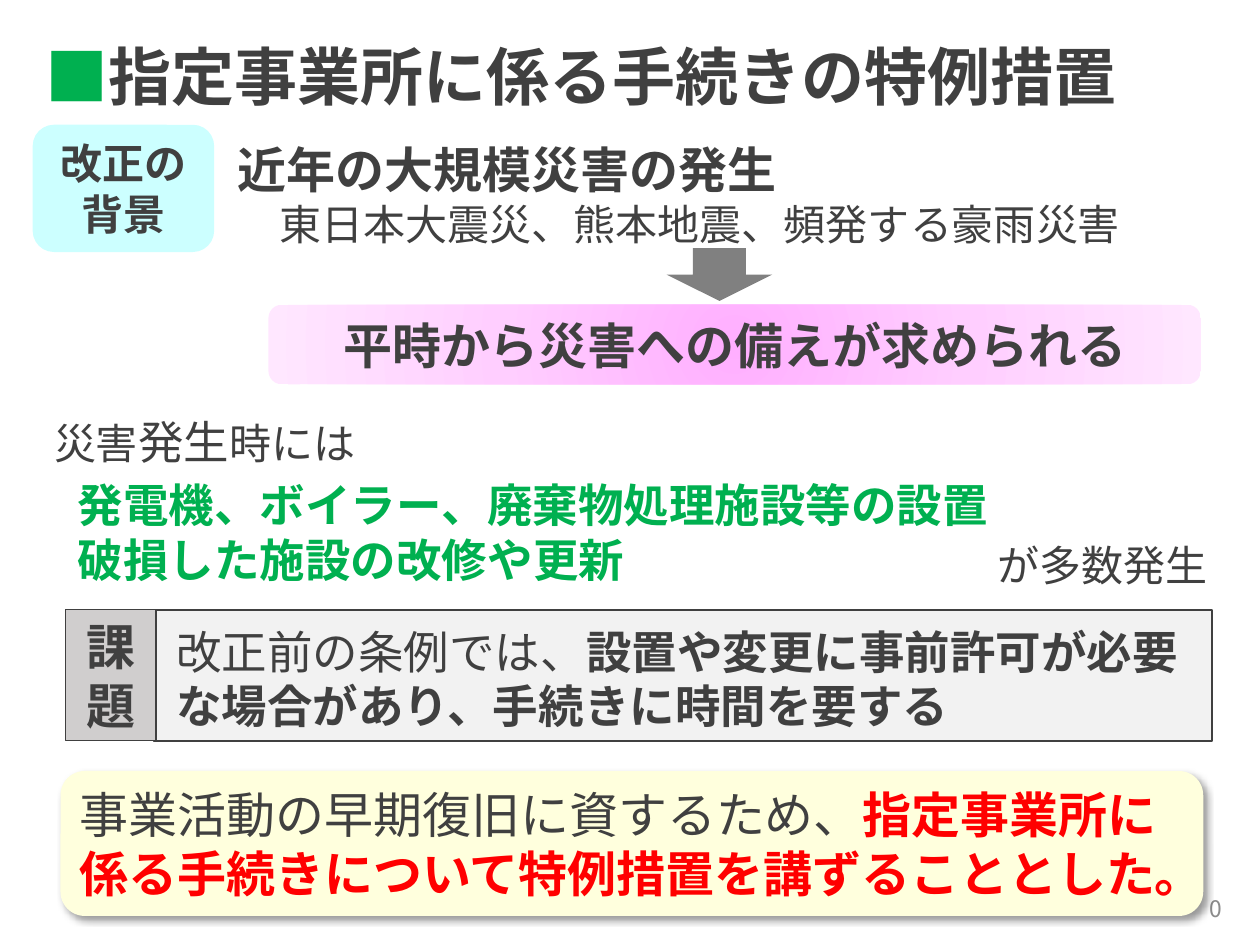
from lxml.etree import SubElement
from pptx import Presentation
from pptx.dml.color import RGBColor
from pptx.enum.lang import MSO_LANGUAGE_ID
from pptx.enum.shapes import MSO_SHAPE
from pptx.enum.text import MSO_ANCHOR, PP_ALIGN
from pptx.oxml import parse_xml
from pptx.oxml.ns import nsdecls, qn
from pptx.util import Pt

FONT = "Noto Sans CJK JP"
COLORS = {
    "text": "404040",
    "green": "00B050",
    "red": "FF0000",
    "number": "8C8C8C",
    "cyan": "CCFFFF",
    "arrow": "808080",
    "panel": "F2F2F2",
    "label": "D0CECE",
    "cream": "FFFFDD",
    "pink": "FFAFFF",
    "pink_mid": "FFCEFF",
    "pink_pale": "FFE7FF",
    "shadow": "000000",
}


def color(name):
    return RGBColor.from_string(COLORS[name])


def style_font(font, properties, size, tint="text", bold=False):
    font.size = Pt(size)
    font.bold = bold
    font.color.rgb = color(tint)
    font.name = FONT
    font.language_id = MSO_LANGUAGE_ID.JAPANESE
    SubElement(properties, qn("a:ea")).set("typeface", FONT)


def write(shape, paragraphs, align=PP_ALIGN.LEFT, anchor=MSO_ANCHOR.MIDDLE):
    frame = shape.text_frame
    frame.word_wrap = True
    frame.vertical_anchor = anchor
    for index, spans in enumerate(paragraphs):
        para = frame.add_paragraph() if index else frame.paragraphs[0]
        para.alignment = align
        for text, *look in spans:
            span = para.add_run()
            span.text = text
            if len(spans) > 1:
                style_font(span.font, span._r.get_or_add_rPr(), *look)
        if len(spans) == 1:
            properties = para._p.get_or_add_pPr().get_or_add_defRPr()
            style_font(para.font, properties, *spans[0][1:])
    return frame


def indent(para, left, first=0):
    properties = para._p.get_or_add_pPr()
    properties.set("marL", str(Pt(left)))
    properties.set("indent", str(Pt(first)))


def add_text(page, place, paragraphs, align=PP_ALIGN.LEFT, anchor=MSO_ANCHOR.TOP):
    box = page.shapes.add_textbox(*map(Pt, place))
    return write(box, paragraphs, align, anchor)


def add_block(page, kind, place, fill, line_width=0):
    block = page.shapes.add_shape(kind, *map(Pt, place))
    block.shadow.inherit = False
    block.fill.solid()
    block.fill.fore_color.rgb = color(fill)
    if line_width:
        block.line.color.rgb = color("text")
        block.line.width = Pt(line_width)
    else:
        block.line.fill.background()
    return block


def glow_from_center(block, names):
    step = 100000 // (len(names) - 1)
    stops = "".join(
        f'<a:gs pos="{index * step}"><a:srgbClr val="{COLORS[name]}"/></a:gs>'
        for index, name in enumerate(names)
    )
    gradient = parse_xml(
        f'<a:gradFill {nsdecls("a")} rotWithShape="1"><a:gsLst>{stops}</a:gsLst>'
        '<a:path path="circle"><a:fillToRect l="50000" t="50000" r="50000" b="50000"/>'
        "</a:path></a:gradFill>"
    )
    properties = block._element.spPr
    properties.replace(properties.find(qn("a:solidFill")), gradient)


def drop_shadow(block):
    effects = block._element.spPr.find(qn("a:effectLst"))
    effects.append(parse_xml(
        f'<a:outerShdw {nsdecls("a")} blurRad="{Pt(4)}" dist="{Pt(3)}" dir="2700000" '
        f'algn="tl" rotWithShape="0"><a:srgbClr val="{COLORS["shadow"]}">'
        '<a:alpha val="40000"/></a:srgbClr></a:outerShdw>'
    ))


def add_background_section(page):
    badge = add_block(page, MSO_SHAPE.ROUNDED_RECTANGLE, (18.7, 71.3, 103.7, 72.7), "cyan")
    write(badge, [[("改正の", 24, "text", True)], [("背景", 24, "text", True)]], PP_ALIGN.CENTER)
    disasters = add_text(page, (128.9, 76.3, 563, 70.6), [
        [("近年の大規模災害の発生", 28, "text", True)],
        [("東日本大震災、熊本地震、頻発する豪雨災害", 24)],
    ])
    indent(disasters.paragraphs[1], 24)
    add_block(page, MSO_SHAPE.DOWN_ARROW, (380.9, 141.8, 60.5, 30.2), "arrow")
    need = add_block(page, MSO_SHAPE.ROUNDED_RECTANGLE, (153.4, 174.2, 532.8, 45.4), "pink")
    glow_from_center(need, ["pink", "pink_mid", "pink_pale"])
    write(need, [[("平時から災害への備えが求められる", 28, "text", True)]], PP_ALIGN.CENTER)


def add_disaster_section(page):
    add_text(page, (37.4, 269.3, 603.4, 70.6), [
        [("発電機、ボイラー、廃棄物処理施設等の設置", 26, "green", True)],
        [("破損した施設の改修や更新", 26, "green", True)],
    ])
    add_text(page, (23.8, 233.3, 260, 38.9), [[("災害", 24), ("発生", 26), ("時には", 24)]])
    add_text(page, (563, 304.6, 139.7, 36), [[("が多数発生", 24)]])


def add_issue_section(page):
    top, height = 348.5, 74.9
    add_block(page, MSO_SHAPE.RECTANGLE, (87.8, top, 604.8, height), "panel", 1)
    add_text(page, (93.6, 352.8, 609.1, 70.6), [[
        ("改正前の条例では、", 26),
        ("設置や変更に事前許可が必要な場合があり、手続きに時間を要する", 26, "text", True),
    ]])
    label = add_block(page, MSO_SHAPE.RECTANGLE, (37.4, top, 51.8, height), "label", 0.75)
    write(label, [[("課題", 28, "text", True)]], PP_ALIGN.CENTER)


def add_conclusion(page):
    panel = add_block(page, MSO_SHAPE.ROUNDED_RECTANGLE, (34.6, 440.6, 653, 82.8), "cream")
    drop_shadow(panel)
    write(panel, [[
        ("事業活動の早期復旧に資するため、", 28),
        ("指定事業所に係る手続きについて特例措置を講ずることとした。", 28, "red", True),
    ]])


def main():
    deck = Presentation()
    deck.slide_width, deck.slide_height = Pt(720), Pt(540)
    page = deck.slides.add_slide(deck.slide_layouts[6])
    add_text(page, (543.6, 504.7, 162, 28.8), [[("0", 13, "number")]],
             PP_ALIGN.RIGHT, MSO_ANCHOR.MIDDLE)
    title = add_text(page, (18.7, 18, 631.4, 51.1), [[
        ("■", 36, "green", True),
        ("指定事業所に係る手続きの特例措置", 36, "text", True),
    ]])
    indent(title.paragraphs[0], 21.6, -21.6)
    add_background_section(page)
    add_disaster_section(page)
    add_issue_section(page)
    add_conclusion(page)
    deck.save("out.pptx")


if __name__ == "__main__":
    main()
